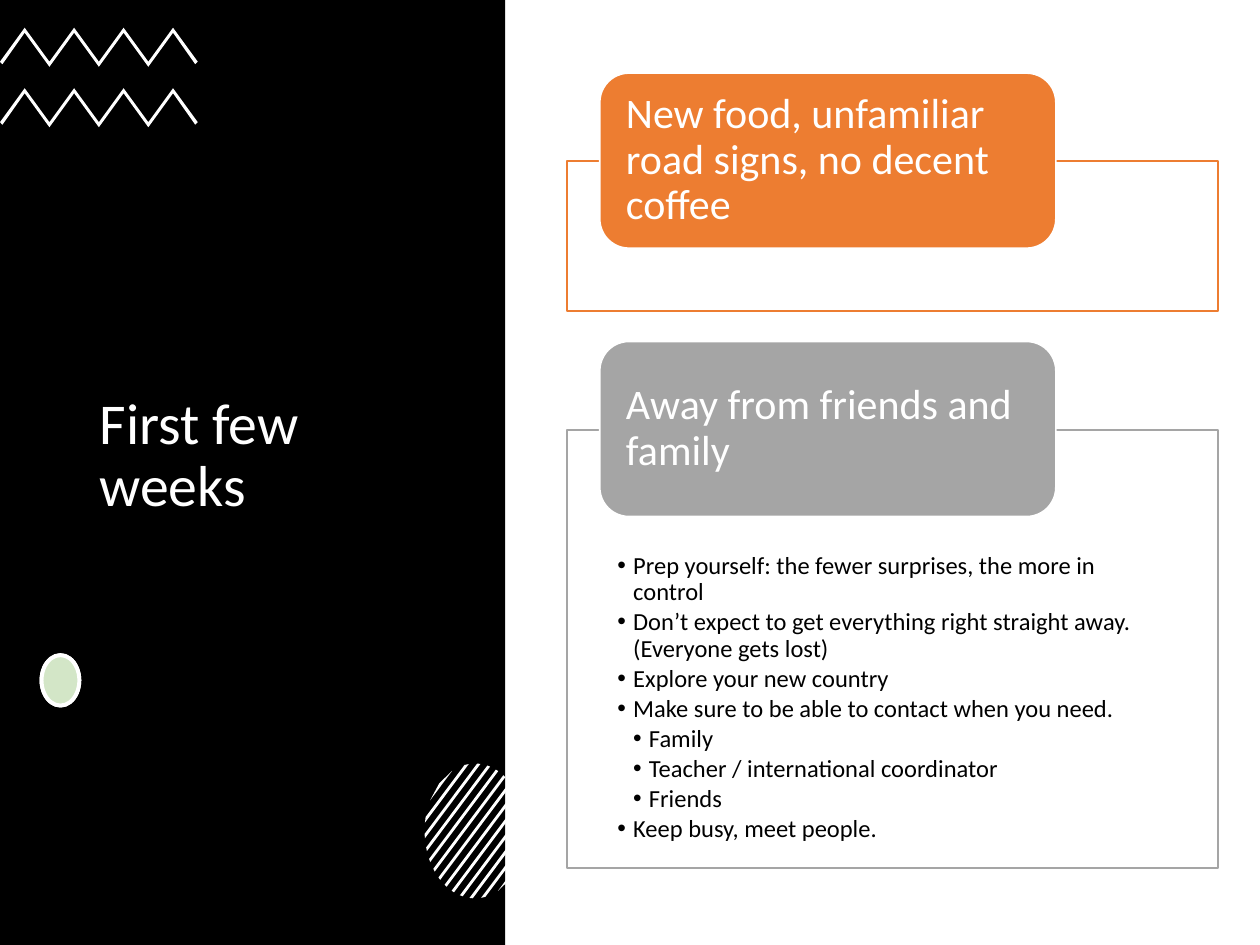
from math import acos, cos, pi, sin, sqrt

from lxml.etree import SubElement
from pptx import Presentation
from pptx.dml.color import RGBColor
from pptx.enum.shapes import MSO_SHAPE
from pptx.enum.text import MSO_ANCHOR, MSO_AUTO_SIZE, PP_ALIGN
from pptx.oxml.ns import qn
from pptx.util import Inches, Pt

BLACK = RGBColor(0x00, 0x00, 0x00)
WHITE = RGBColor(0xFF, 0xFF, 0xFF)
ORANGE = RGBColor(0xED, 0x7D, 0x31)
GRAY = RGBColor(0xA5, 0xA5, 0xA5)
GREEN = RGBColor(0x70, 0xAD, 0x47)
FONT = "Calibri"

TIPS = [
    (0, "Prep yourself: the fewer surprises, the more in control"),
    (0, "Don’t expect to get everything right straight away. (Everyone gets lost)"),
    (0, "Explore your new country"),
    (0, "Make sure to be able to contact when you need."),
    (1, "Family"),
    (1, "Teacher / international coordinator"),
    (1, "Friends"),
    (0, "Keep busy, meet people."),
]


def paint(shape, fill, line=None, width=1, alpha=None):
    shape.shadow.inherit = False
    shape.fill.solid()
    shape.fill.fore_color.rgb = fill
    if alpha is not None:
        color = shape.element.spPr.find(qn("a:solidFill"))[0]
        SubElement(color, qn("a:alpha")).set("val", str(alpha * 1000))
    if line is None:
        shape.line.fill.background()
    else:
        shape.line.color.rgb = line
        shape.line.width = Pt(width)
    return shape


def add_form(slide, kind, box):
    return slide.shapes.add_shape(kind, *(Inches(n) for n in box))


def place(shape, box):
    shape.left, shape.top, shape.width, shape.height = (Inches(n) for n in box)


def add_path(slide, points):
    dots = [(Inches(x), Inches(y)) for x, y in points]
    pen = slide.shapes.build_freeform(*dots[0])
    pen.add_line_segments(dots[1:], close=True)
    paint(pen.convert_to_shape(), WHITE)


def set_inset(frame, left, top, right, bottom):
    frame.margin_left, frame.margin_top = Inches(left), Inches(top)
    frame.margin_right, frame.margin_bottom = Inches(right), Inches(bottom)


def style(para, size, color):
    para.alignment = PP_ALIGN.LEFT
    para.line_spacing = 0.9
    para.space_before = Pt(0)
    para.font.name = FONT
    para.font.size = Pt(size)
    para.font.color.rgb = color


def add_zigzag(slide, box):
    left, top, width, height = box
    step, thick, trim = width / 8, 0.04, 0.02
    drop = height - thick + 0.01
    upper = [(left + i * step, top + (0 if i % 2 else drop)) for i in range(9)]
    lower = [(x, y + thick) for x, y in upper[1:-1]]
    first = (left + trim, top + drop + trim)
    last = (left + width - trim, top + drop + trim)
    add_path(slide, upper + [last] + lower[::-1] + [first])


def add_stripes(slide, box):
    left, top, width, height = box
    gap, half = 0.23, 0.035

    def rim(level, side):
        turn = acos(max(-1, min(1, level / sqrt(2))))
        angle = pi / 4 + side * turn
        return (left + width * (1 + cos(angle)) / 2,
                top + height * (1 + sin(angle)) / 2)

    for k in range(-6, 7):
        low, high = k * gap - half, k * gap + half
        add_path(slide, [rim(low, 1), rim(low, -1), rim(high, -1), rim(high, 1)])


def add_panel(slide, box):
    left, top, width, height = box
    panel = paint(add_form(slide, MSO_SHAPE.RECTANGLE, box), BLACK)
    title = slide.shapes.title
    title.element.addprevious(panel.element)
    place(title, (left + 0.69, top + 1.31, 2.62, 4.63))
    frame = title.text_frame
    frame.text = "First few weeks"
    frame.word_wrap = True
    frame.auto_size = MSO_AUTO_SIZE.NONE
    frame.vertical_anchor = MSO_ANCHOR.MIDDLE
    style(frame.paragraphs[0], 33, WHITE)

    for y in (0.22, 0.7):
        add_zigzag(slide, (left, top + y, 1.57, 0.3))
    for fill, alpha in ((WHITE, None), (GREEN, 30)):
        dot = add_form(slide, MSO_SHAPE.OVAL, (left + 0.33, top + 5.2, 0.3, 0.4))
        paint(dot, fill, WHITE, 2.25, alpha)
    add_stripes(slide, (left + 3.37, top + 6.06, 0.8, 1.07))


def add_tips(body, box):
    place(body, box)
    frame = body.text_frame
    frame.word_wrap = True
    frame.auto_size = MSO_AUTO_SIZE.NONE
    frame.vertical_anchor = MSO_ANCHOR.TOP
    set_inset(frame, 0.4, 0.98, 0.4, 0.11)
    frame.text = "\n".join(text for _, text in TIPS)
    for para, (level, _) in zip(frame.paragraphs, TIPS):
        para.level = level
        para.space_after = Pt(2)
        style(para, 14, BLACK)
        props = para._p.get_or_add_pPr()
        props.set("marL", str(Inches(0.125 * (level + 1))))
        props.set("indent", str(Inches(-0.125)))
        mark = props.makeelement(qn("a:buChar"), {"char": "•"})
        props.find(qn("a:defRPr")).addprevious(mark)


def add_card(slide, box, color, text, body=None):
    left, top, width, height = box
    frame = add_form(slide, MSO_SHAPE.RECTANGLE, box)
    paint(frame, WHITE, color, 1, 90)
    if body is not None:
        add_tips(body, box)
        frame.element.addnext(body.element)
    tab = add_form(slide, MSO_SHAPE.ROUNDED_RECTANGLE,
                   (left + 0.26, top - 0.7, 3.62, 1.39))
    paint(tab, color, WHITE)
    label = tab.text_frame
    label.text = text
    label.word_wrap = True
    label.vertical_anchor = MSO_ANCHOR.MIDDLE
    set_inset(label, 0.14, 0, 0.14, 0)
    style(label.paragraphs[0], 24, WHITE)


def main():
    deck = Presentation()
    deck.slide_width, deck.slide_height = Inches(10), Inches(7.5)
    slide = deck.slides.add_slide(deck.slide_layouts[1])
    body = slide.placeholders[1]
    add_panel(slide, (0, 0, 4.01, 7.5))
    add_card(slide, (4.5, 1.28, 5.17, 1.19), ORANGE,
             "New food, unfamiliar road signs, no decent coffee")
    add_card(slide, (4.5, 3.41, 5.17, 3.48), GRAY,
             "Away from friends and family", body)
    deck.save("out.pptx")


if __name__ == "__main__":
    main()
